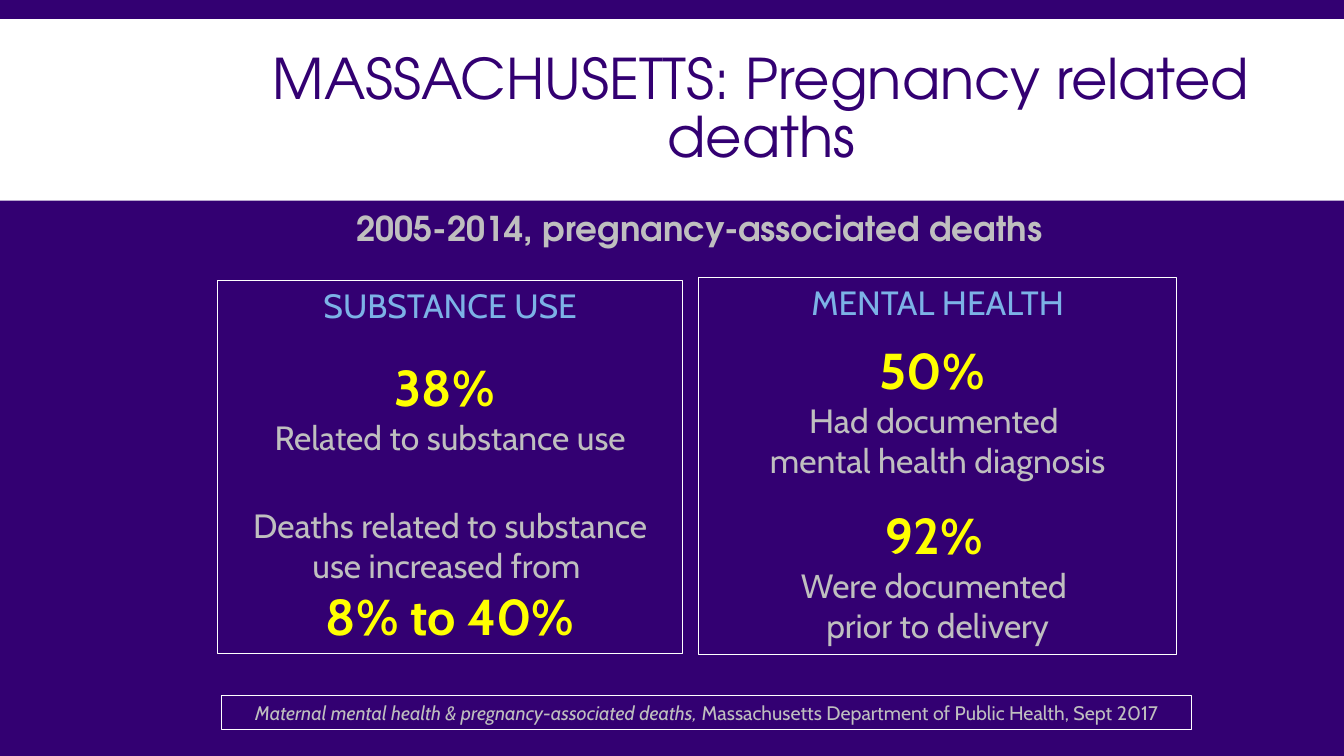
from lxml.etree import SubElement
from pptx import Presentation
from pptx.dml.color import RGBColor
from pptx.enum.shapes import MSO_SHAPE
from pptx.enum.text import MSO_ANCHOR, MSO_AUTO_SIZE, PP_ALIGN
from pptx.oxml.ns import qn
from pptx.util import Inches, Pt

COLORS = {
    "purple": "330072",
    "white": "FFFFFF",
    "gray": "BFBFBF",
    "blue": "7CB2E6",
    "yellow": "FFFF00",
}
HEADING_FONT = "TeX Gyre Adventor"
BODY_FONT = "Cabin"


def color(name):
    return RGBColor.from_string(COLORS[name])


def heading(text):
    return text, 24, "blue", False, False


def figure(text):
    return text, 36, "yellow", True, False


def label(text):
    return text, 24, "gray", False, False


class SlideBuilder:
    def __init__(self, slide):
        self.slide = slide
        slide.background.fill.solid()
        slide.background.fill.fore_color.rgb = color("purple")

    def add_run(self, paragraph, font_name, text, size, color_name, bold=False, italic=False):
        run = paragraph.add_run()
        run.text = text
        run.font.name = font_name
        run.font.size = Pt(size)
        run.font.bold = bold
        run.font.italic = italic
        run.font.color.rgb = color(color_name)

    def rectangle(self, left, top, width, height):
        shape = self.slide.shapes.add_shape(
            MSO_SHAPE.RECTANGLE, Inches(left), Inches(top), Inches(width), Inches(height))
        shape.shadow.inherit = False
        return shape

    def band(self, *box):
        shape = self.rectangle(*box)
        shape.fill.solid()
        shape.fill.fore_color.rgb = color("white")
        shape.line.fill.background()
        # Keep the band behind the placeholders
        self.slide.shapes._spTree.insert(2, shape._element)

    def placeholder(self, index, box, anchor, line_spacing, run):
        shape = self.slide.placeholders[index]
        shape.left, shape.top, shape.width, shape.height = map(Inches, box)
        frame = shape.text_frame
        frame.auto_size = MSO_AUTO_SIZE.NONE
        frame.vertical_anchor = anchor
        paragraph = frame.paragraphs[0]
        properties = paragraph._p.get_or_add_pPr()
        properties.set("marL", "0")
        properties.set("indent", "0")
        SubElement(properties, qn("a:buNone"))
        paragraph.alignment = PP_ALIGN.CENTER
        paragraph.line_spacing = line_spacing
        paragraph.space_before = Pt(0)
        self.add_run(paragraph, HEADING_FONT, *run)

    def outlined_box(self, box, lines):
        """Each line is a pair: space before in points, list of runs."""
        shape = self.rectangle(*box)
        shape.fill.background()
        shape.line.color.rgb = color("white")
        shape.line.width = Pt(0.75)
        frame = shape.text_frame
        frame.word_wrap = True
        frame.vertical_anchor = MSO_ANCHOR.TOP
        for number, (space_before, runs) in enumerate(lines):
            paragraph = frame.add_paragraph() if number else frame.paragraphs[0]
            paragraph.alignment = PP_ALIGN.CENTER
            paragraph.space_before = Pt(space_before)
            for run in runs:
                self.add_run(paragraph, BODY_FONT, *run)


def main():
    presentation = Presentation()
    presentation.slide_width = Inches(13.33)
    presentation.slide_height = Inches(7.5)
    builder = SlideBuilder(presentation.slides.add_slide(presentation.slide_layouts[1]))

    # Title band and headings
    builder.band(0, 0.19, 13.33, 1.8)
    builder.placeholder(0, (2.2, 0.28, 10.7, 1.65), MSO_ANCHOR.MIDDLE, 0.85,
                        ("MASSACHUSETTS: Pregnancy related deaths", 40, "purple"))
    builder.placeholder(1, (2.2, 2.12, 9.47, 0.57), MSO_ANCHOR.TOP, 0.7,
                        ("2005-2014, pregnancy-associated deaths", 24.4, "gray", True))

    # Citation
    builder.outlined_box((2.2, 6.9, 9.62, 0.34), [
        (0, [("Maternal mental health & pregnancy-associated deaths, ", 14, "gray", False, True),
             ("Massachusetts Department of Public Health, Sept 2017", 14, "gray")]),
    ])

    # Mental health
    builder.outlined_box((6.93, 2.75, 4.74, 3.74), [
        (0, [heading("MENTAL HEALTH")]),
        (12, [figure("50% ")]),
        (0, [label("Had documented ")]),
        (0, [label("mental health diagnosis")]),
        (17, [figure("92%"), label(" ")]),
        (0, [label("Were documented ")]),
        (0, [label("prior to delivery")]),
    ])

    # Substance use
    builder.outlined_box((2.16, 2.78, 4.61, 3.7), [
        (0, [heading("SUBSTANCE USE")]),
        (22, [figure("38% ")]),
        (0, [label("Related to substance use")]),
        (34, [label("Deaths related to substance use increased from ")]),
        (0, [figure("8% to 40%")]),
    ])

    presentation.save("out.pptx")


if __name__ == "__main__":
    main()
